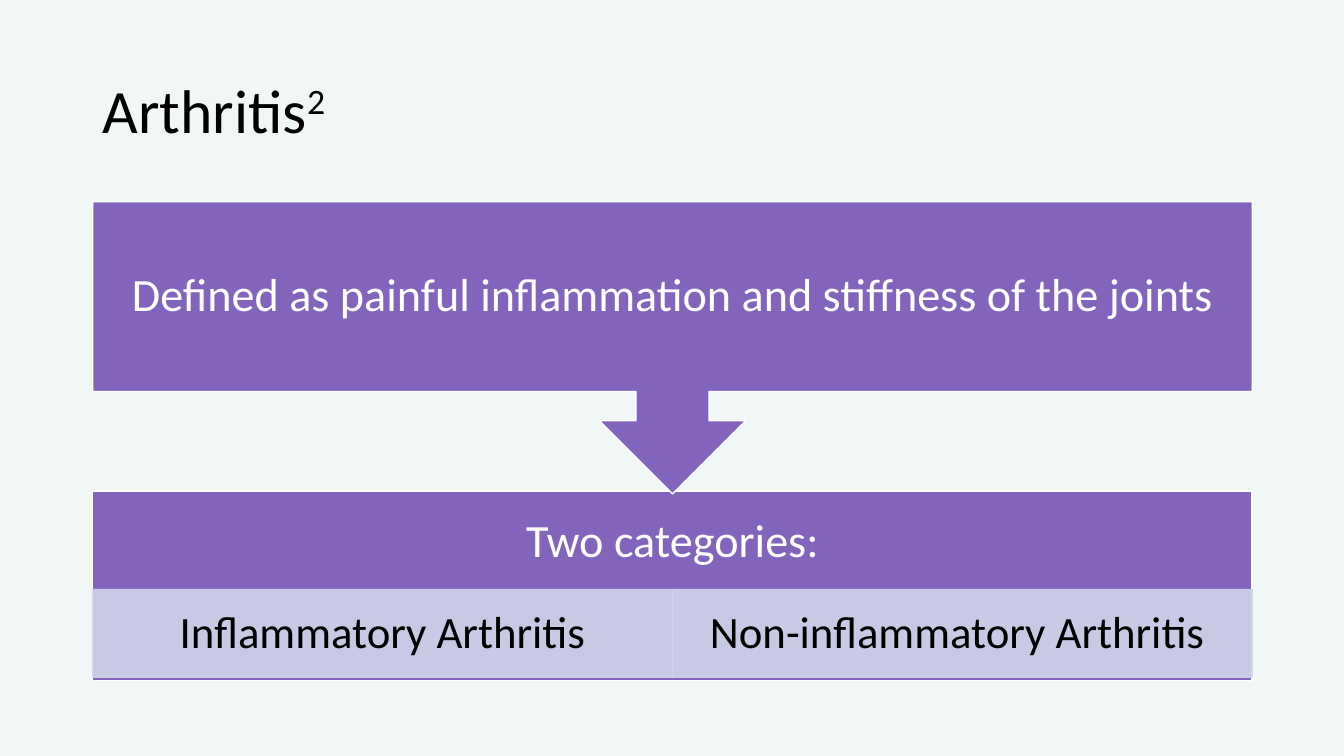
from dataclasses import dataclass

from pptx import Presentation
from pptx import util as u
from pptx.dml.color import RGBColor
from pptx.enum import shapes, text
from pptx.oxml import parse_xml
from pptx.oxml.ns import nsdecls


@dataclass(frozen=True)
class Theme:
    font: str = "Calibri"
    background: str = "F0F7F6"
    accent: str = "8264BD"
    tint: str = "CFD5EA"
    light: str = "FFFFFF"
    dark: str = "000000"
    title: int = 44
    heading: int = 33
    category: int = 32
    tint_opacity: int = 90


THEME = Theme()


def rgb(value):
    return RGBColor.from_string(value)


def set_opacity(fill, percent):
    alpha = parse_xml(f'<a:alpha {nsdecls("a")} val="{percent * 1000}"/>')
    fill._xPr.find(".//{*}solidFill/{*}srgbClr").append(alpha)


def add_text(sp, content, size, color, align=text.PP_ALIGN.CENTER,
             insets=(0.1, 0.05, 0.1, 0.05), superscript=""):
    tf = sp.text_frame
    tf.word_wrap = True
    tf.vertical_anchor = text.MSO_ANCHOR.MIDDLE
    tf.margin_left, tf.margin_top, tf.margin_right, tf.margin_bottom = map(u.Inches, insets)
    p = tf.paragraphs[0]
    p.alignment = align
    p.line_spacing = 0.9
    for part, baseline in ((content, 0), (superscript, 30)):
        if part:
            r = p.add_run()
            r.text = part
            r.font.name = THEME.font
            r.font.size = u.Pt(size)
            r.font.color.rgb = rgb(color)
            if baseline:
                r.font._element.set("baseline", str(baseline * 1000))


def add_block(s, kind, box, fill, line, opacity=100):
    sp = s.shapes.add_shape(kind, *map(u.Inches, box))
    sp.shadow.inherit = False
    sp.fill.solid()
    sp.fill.fore_color.rgb = rgb(fill)
    sp.line.color.rgb = rgb(line)
    sp.line.width = u.Pt(1)
    if opacity < 100:
        set_opacity(sp.fill, opacity)
        set_opacity(sp.line.fill, opacity)
    return sp


def add_title(s, box):
    sp = s.shapes.add_textbox(*map(u.Inches, box))
    add_text(sp, "Arthritis", THEME.title, THEME.dark,
             align=text.PP_ALIGN.LEFT, superscript="2")


def add_categories(s, box, heading, categories):
    left, top, width, height = box
    header_height, cell_top, cell_height = 1.02, 0.98, 0.87
    sp = add_block(s, shapes.MSO_SHAPE.RECTANGLE, box, THEME.accent, THEME.light)
    add_text(sp, heading, THEME.heading, THEME.light,
             insets=(0.26, 0.26, 0.26, 0.26 + height - header_height))
    cell_width = width / len(categories)
    for i, category in enumerate(categories):
        cell = (left + i * cell_width, top + cell_top, cell_width, cell_height)
        sp = add_block(s, shapes.MSO_SHAPE.RECTANGLE, cell, THEME.tint, THEME.tint,
                       THEME.tint_opacity)
        add_text(sp, category, THEME.category, THEME.dark,
                 insets=(0.25, 0.04, 0.25, 0.04))


def add_definition(s, box, definition):
    sp = add_block(s, shapes.MSO_SHAPE.DOWN_ARROW_CALLOUT, box, THEME.accent, THEME.light)
    add_text(sp, definition, THEME.heading, THEME.light, insets=(0.26,) * 4)


def main():
    prs = Presentation()
    prs.slide_width, prs.slide_height = u.Inches(13.33), u.Inches(7.5)
    s = prs.slides.add_slide(prs.slide_layouts[6])
    s.background.fill.solid()
    s.background.fill.fore_color.rgb = rgb(THEME.background)
    left, width = 0.92, 11.5
    add_title(s, (left, 0.4, width, 1.45))
    add_categories(s, (left, 4.87, width, 1.88), "Two categories:",
                   ("Inflammatory Arthritis", "Non-inflammatory Arthritis "))
    add_definition(s, (left, 2, width, 2.9),
                   "Defined as painful inflammation and stiffness of the joints")
    prs.save("out.pptx")


if __name__ == "__main__":
    main()
